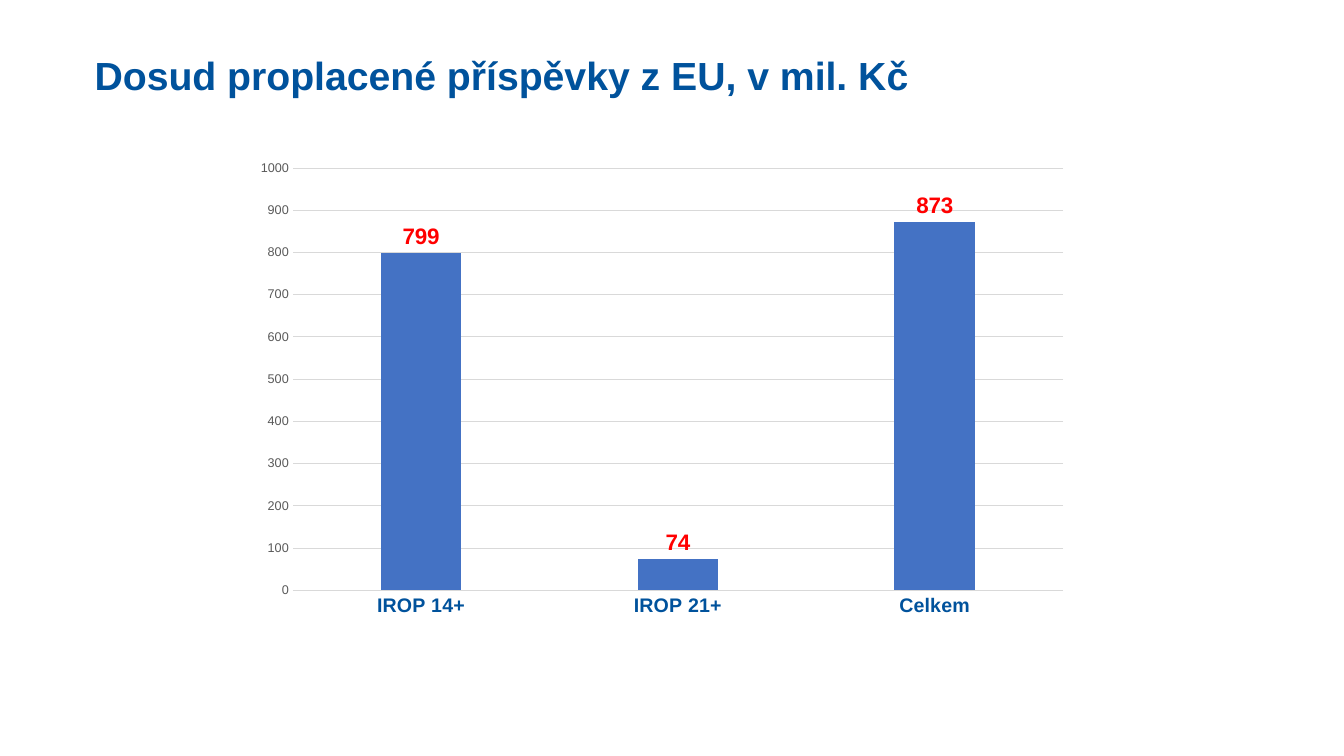
import pptx
import pptx.util
import pptx.chart.data
import pptx.dml.color
import pptx.enum.chart
import pptx.enum.text

# Content
TITLE = "Dosud proplacené příspěvky z EU, v mil. Kč"
PAYMENTS = {"IROP 14+": 799, "IROP 21+": 74, "Celkem": 873}
COLORS = {"heading": "00529C", "bar": "4472C4", "value": "FF0000",
          "scale": "595959", "grid": "D9D9D9", "text": "000000"}
FONT = "Arial"

Inches = pptx.util.Inches
Pt = pptx.util.Pt


def rgb(name):
    return pptx.dml.color.RGBColor.from_string(COLORS[name])


def style_font(font, size, color, bold=False):
    font.name = FONT
    font.size = Pt(size)
    font.bold = bold
    font.color.rgb = rgb(color)


def style_line(line):
    line.color.rgb = rgb("grid")
    line.width = Pt(0.75)


def add_title(slide):
    box = slide.shapes.add_textbox(Inches(0.84), Inches(0.4), Inches(11.76), Inches(0.75))
    frame = box.text_frame
    frame.word_wrap = True
    frame.vertical_anchor = pptx.enum.text.MSO_ANCHOR.MIDDLE
    heading = frame.paragraphs[0]
    heading.line_spacing = 0.9
    run = heading.add_run()
    run.text = TITLE
    style_font(run.font, 28, "heading", True)


def add_payments_chart(slide):
    data = pptx.chart.data.CategoryChartData()
    data.categories = list(PAYMENTS)
    data.add_series("Series 1", list(PAYMENTS.values()))
    chart = slide.shapes.add_chart(
        pptx.enum.chart.XL_CHART_TYPE.COLUMN_CLUSTERED,
        Inches(2.42), Inches(1.5), Inches(8.29), Inches(4.71), data).chart
    chart.has_legend = False
    chart.has_title = False
    style_font(chart.font, 10, "text")

    # Columns and their values
    plot = chart.plots[0]
    plot.gap_width = 219
    plot.overlap = -27
    plot.vary_by_categories = False
    payments = plot.series[0]
    payments.format.fill.solid()
    payments.format.fill.fore_color.rgb = rgb("bar")
    labels = payments.data_labels
    labels.show_value = True
    labels.position = pptx.enum.chart.XL_LABEL_POSITION.OUTSIDE_END
    style_font(labels.font, 16, "value", True)

    # Axes
    programmes, scale = chart.category_axis, chart.value_axis
    for axis in (programmes, scale):
        axis.major_tick_mark = pptx.enum.chart.XL_TICK_MARK.NONE
        axis.minor_tick_mark = pptx.enum.chart.XL_TICK_MARK.NONE
    style_font(programmes.tick_labels.font, 14, "heading", True)
    style_line(programmes.format.line)
    style_font(scale.tick_labels.font, 9, "scale")
    scale.format.line.fill.background()
    scale.minimum_scale, scale.maximum_scale, scale.major_unit = 0, 1000, 100
    scale.has_major_gridlines = True
    style_line(scale.major_gridlines.format.line)


def main():
    deck = pptx.Presentation()
    deck.slide_width = Inches(13.33)
    deck.slide_height = Inches(7.5)
    slide = deck.slides.add_slide(deck.slide_layouts[6])
    add_title(slide)
    add_payments_chart(slide)
    deck.save("out.pptx")


if __name__ == "__main__":
    main()
